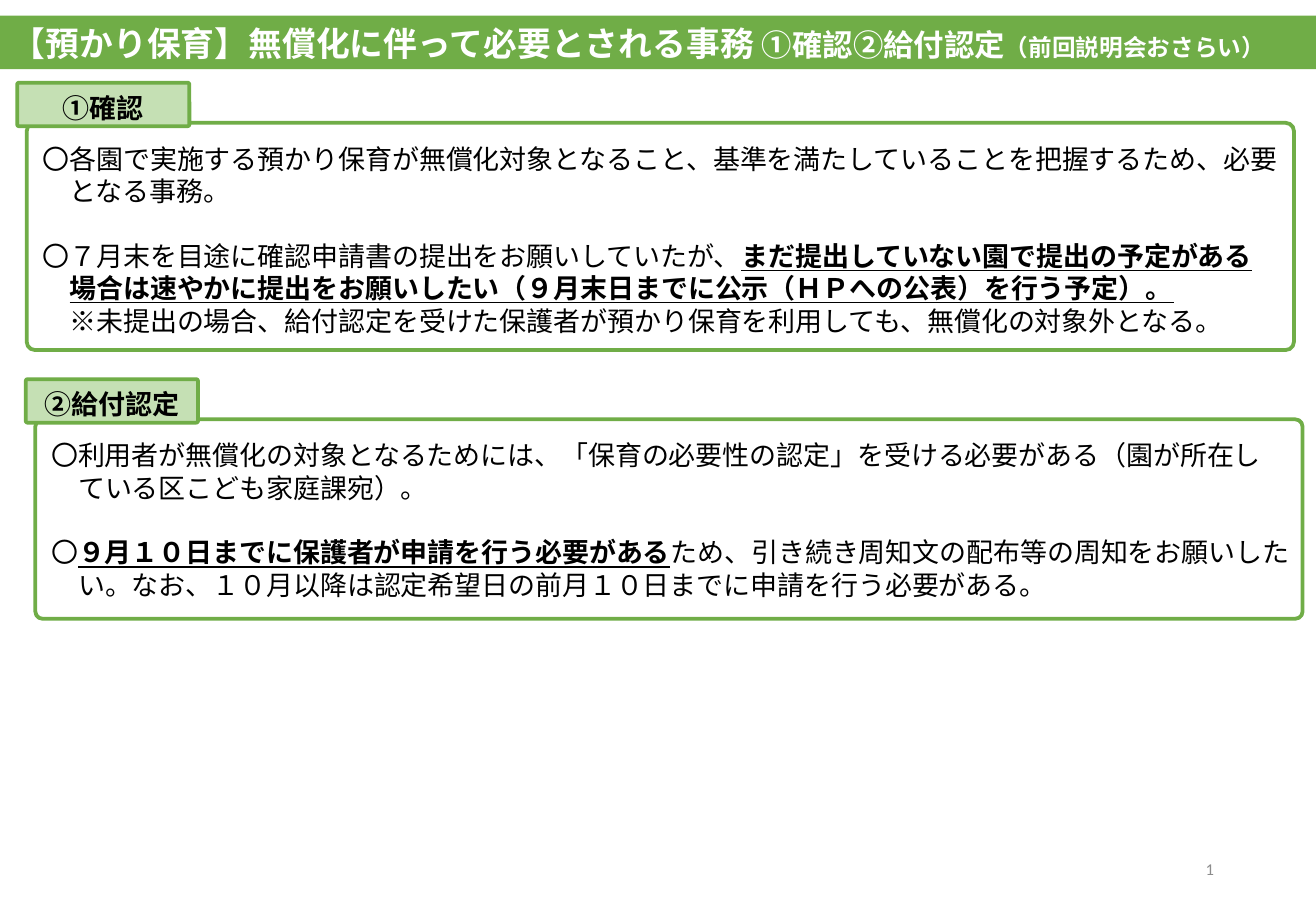
"""Build the slide on confirmation and benefit certification for extended childcare."""
import pptx
import pptx.dml.color
import pptx.enum.shapes
import pptx.enum.text
import pptx.oxml.ns
import pptx.util
from lxml import etree

Cm, Pt = pptx.util.Cm, pptx.util.Pt
SHAPES = pptx.enum.shapes.MSO_SHAPE
ALIGN = pptx.enum.text.PP_ALIGN
MIDDLE = pptx.enum.text.MSO_ANCHOR.MIDDLE
JAPANESE = "Noto Sans CJK JP"
GREEN, PALE_GREEN, BLACK, WHITE, GREY = "70AD47", "C5E0B4", "000000", "FFFFFF", "8C8C8C"
BODY_SIZE, LINE_PITCH = 16, 19.2

TITLE = [
    ("【預かり保育】無償化に伴って必要とされる事務 ", 20),
    ("①確認②給付認定", 18),
    ("（前回説明会おさらい）", 14),
]
PAGE_NUMBER = "1"
# (label, left, top, frame height, items); an item is lines, a line is (text, emphasised) pairs
SECTIONS = [
    ("①確認", 0.36, 1.73, 4.75, [
        [[("〇各園で実施する預かり保育が無償化対象となること、基準を満たしていることを把握するため、必要", False)],
         [("となる事務。", False)]],
        [[("〇７月末を目途に確認申請書の提出をお願いしていたが、", False),
          ("まだ提出していない園で提出の予定がある", True)],
         [("場合は速やかに提出をお願いしたい（９月末日までに公示（ＨＰへの公表）を行う予定）。", True)],
         [("※未提出の場合、給付認定を受けた保護者が預かり保育を利用しても、無償化の対象外となる。", False)]],
    ]),
    ("②給付認定", 0.54, 7.93, 4.17, [
        [[("〇利用者が無償化の対象となるためには、「保育の必要性の認定」を受ける必要がある（園が所在し", False)],
         [("ている区こども家庭課宛）。", False)]],
        [[("〇", False), ("９月１０日までに保護者が申請を行う必要がある", True),
          ("ため、引き続き周知文の配布等の周知をお願いした", False)],
         [("い。なお、１０月以降は認定希望日の前月１０日までに申請を行う必要がある。", False)]],
    ]),
]


def color(hex_value):
    return pptx.dml.color.RGBColor.from_string(hex_value)


def add_run(paragraph, text, size, hex_value, bold=False, underline=False, font=JAPANESE):
    run = paragraph.add_run()
    run.text = text
    run.font.name = font
    run.font.size = Pt(size)
    run.font.bold = bold
    run.font.underline = underline
    run.font.color.rgb = color(hex_value)
    east_asian = etree.SubElement(run.font._element, pptx.oxml.ns.qn("a:ea"))
    east_asian.set("typeface", font)


def add_panel(slide, kind, box, fill=None, line=None, corner=None):
    panel = slide.shapes.add_shape(kind, *map(Cm, box))
    panel.shadow.inherit = False
    if corner is not None:
        panel.adjustments[0] = corner
    if fill:
        panel.fill.solid()
        panel.fill.fore_color.rgb = color(fill)
    else:
        panel.fill.background()
    if line:
        panel.line.color.rgb = color(line)
        panel.line.width = Pt(2.25)
    else:
        panel.line.fill.background()
    panel.text_frame.vertical_anchor = MIDDLE
    return panel


def add_section(slide, label, left, top, frame_height, items):
    add_panel(slide, SHAPES.ROUNDED_RECTANGLE, (left + 0.2, top + 0.84, 26.49, frame_height),
              line=GREEN, corner=0.036)
    tab = add_panel(slide, SHAPES.ROUNDED_RECTANGLE, (left, top, 3.6, 0.91),
                    fill=PALE_GREEN, line=GREEN, corner=0.042)
    tab.text_frame.margin_top = Cm(0.25)
    heading = tab.text_frame.paragraphs[0]
    heading.alignment = ALIGN.CENTER
    add_run(heading, label, BODY_SIZE, BLACK, bold=True)

    body = slide.shapes.add_textbox(Cm(left + 0.28), Cm(top + 1.12), Cm(26.77), Cm(frame_height - 0.5))
    body.text_frame.word_wrap = True
    for item_index, lines in enumerate(items):
        for line_index, parts in enumerate(lines):
            first = item_index == line_index == 0
            paragraph = body.text_frame.paragraphs[0] if first else body.text_frame.add_paragraph()
            paragraph.line_spacing = Pt(LINE_PITCH)
            if line_index:
                paragraph._p.get_or_add_pPr().set("marL", str(Pt(BODY_SIZE)))
            elif item_index:
                paragraph.space_before = Pt(LINE_PITCH)
            for text, emphasised in parts:
                add_run(paragraph, text, BODY_SIZE, BLACK, emphasised, emphasised)


def main():
    deck = pptx.Presentation()
    deck.slide_width, deck.slide_height = Cm(27.51), Cm(19.05)
    slide = deck.slides.add_slide(deck.slide_layouts[6])

    banner = add_panel(slide, SHAPES.RECTANGLE, (0, 0.33, 27.51, 1.12), fill=GREEN)
    title = banner.text_frame.paragraphs[0]
    title.alignment = ALIGN.LEFT
    for text, size in TITLE:
        add_run(title, text, size, WHITE, bold=True)

    for section in SECTIONS:
        add_section(slide, *section)

    footer = slide.shapes.add_textbox(Cm(19.43), Cm(17.65), Cm(6.2), Cm(1.02))
    footer.text_frame.word_wrap = True
    footer.text_frame.vertical_anchor = MIDDLE
    number = footer.text_frame.paragraphs[0]
    number.alignment = ALIGN.RIGHT
    add_run(number, PAGE_NUMBER, 9.8, GREY, font="Calibri")

    deck.save("out.pptx")


if __name__ == "__main__":
    main()
